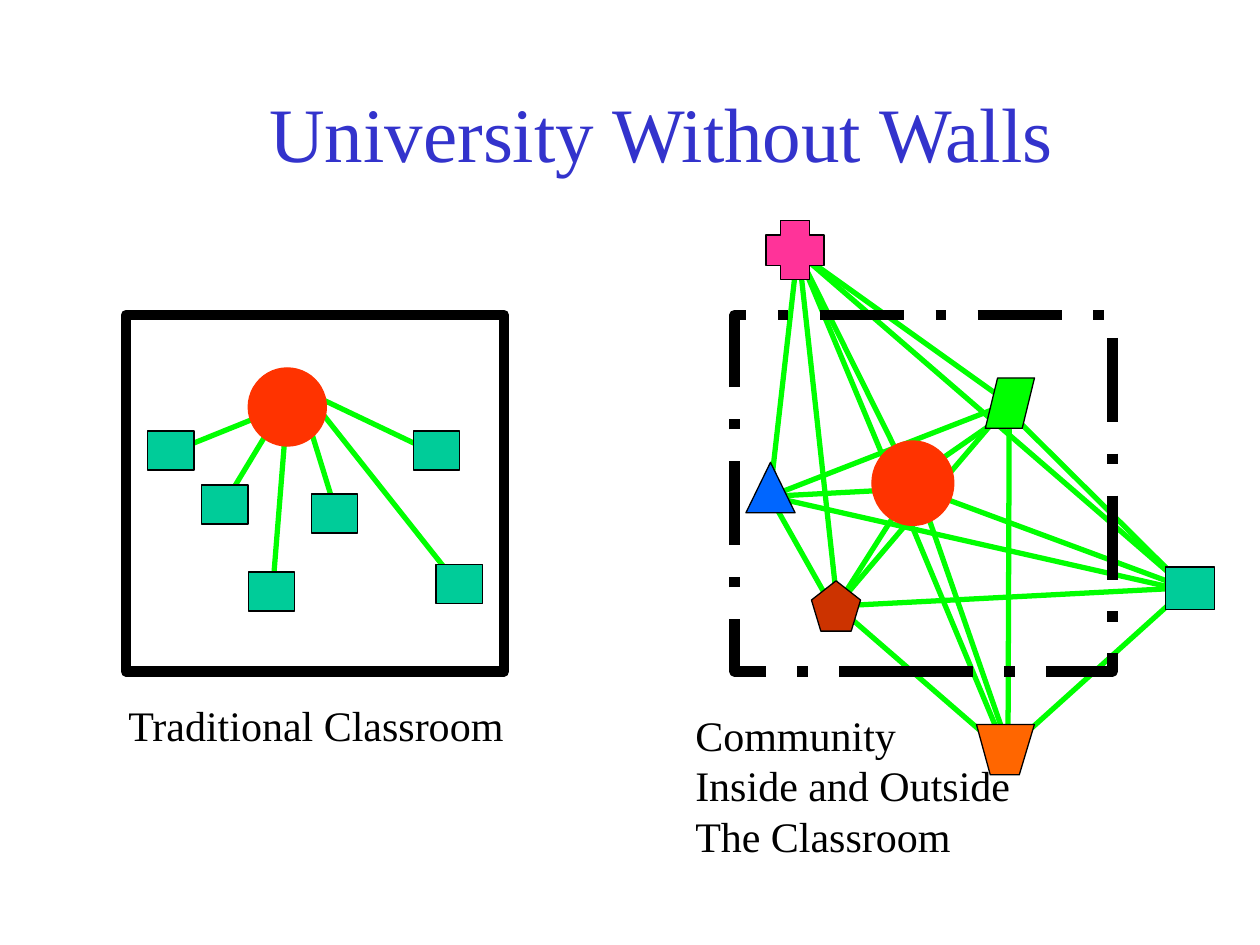
from lxml import etree
from pptx import Presentation
from pptx.dml.color import RGBColor
from pptx.enum.dml import MSO_LINE
from pptx.enum.shapes import MSO_CONNECTOR, MSO_SHAPE
from pptx.enum.text import MSO_ANCHOR, MSO_AUTO_SIZE, PP_ALIGN
from pptx.oxml.ns import qn
from pptx.util import Inches, Pt

RECT = MSO_SHAPE.RECTANGLE
OVAL = MSO_SHAPE.OVAL
SLANT = MSO_SHAPE.PARALLELOGRAM
CROSS = MSO_SHAPE.CROSS
WEDGE = MSO_SHAPE.ISOSCELES_TRIANGLE
PENTA = MSO_SHAPE.REGULAR_PENTAGON
DASH = MSO_LINE.LONG_DASH_DOT
LINE = MSO_CONNECTOR.STRAIGHT
FONT = "Times New Roman"
COLORS = {
    "title": "3333CC", "black": "000000", "link": "00FF00", "hub": "FF3300",
    "teal": "00CC99", "orange": "FF6600", "pink": "FF3399",
    "blue": "0066FF", "brick": "CC3300",
}
COLORS = {name: RGBColor.from_string(code) for name, code in COLORS.items()}

deck = Presentation()
deck.slide_width, deck.slide_height = Inches(10), Inches(7.5)
slide = deck.slides.add_slide(deck.slide_layouts[5])
shapes = slide.shapes


def paint(shape, fill, line="black", width=0.75):
    shape.shadow.inherit = False
    if fill:
        shape.fill.solid()
        shape.fill.fore_color.rgb = COLORS[fill]
    else:
        shape.fill.background()
    shape.line.color.rgb = COLORS[line]
    shape.line.width = Pt(width)
    return shape


def write(para, text, size, color):
    run = para.add_run()
    run.text = text
    run.font.name = FONT
    run.font.size = Pt(size)
    run.font.color.rgb = COLORS[color]


title = shapes.title
title.left, title.top = Inches(1), Inches(0.42)
title.width, title.height = Inches(8.5), Inches(1.25)
frame = title.text_frame
frame.auto_size = MSO_AUTO_SIZE.NONE
frame.vertical_anchor = MSO_ANCHOR.MIDDLE
frame.paragraphs[0].alignment = PP_ALIGN.CENTER
write(frame.paragraphs[0], "University Without Walls", 44, "title")

room = shapes.add_shape(RECT, Inches(1), Inches(2.5), Inches(3), Inches(2.83))
paint(room, None, width=6)

links = [
    (2.1, 3.29, 1.48, 3.54), (2.28, 3.17, 1.79, 3.98),
    (2.28, 3.23, 2.16, 4.73), (2.41, 3.23, 2.66, 4.04),
    (2.47, 3.17, 3.65, 4.66), (2.41, 3.1, 3.46, 3.6),
    (6.33, 2, 8.01, 3.2), (8.01, 3.27, 9.42, 4.67),
    (9.33, 4.75, 7.92, 6.02), (7.92, 5.92, 6.64, 4.81),
    (6.64, 4.88, 6.11, 3.94), (6.11, 3.94, 6.33, 2),
    (6.33, 2, 7.23, 3.81), (8.01, 3.27, 7.23, 3.81),
    (9.42, 4.67, 7.29, 3.88), (7.29, 3.88, 8, 5.92),
    (7.23, 3.88, 6.64, 4.81), (7.23, 3.88, 6.11, 3.94),
    (6.33, 1.92, 6.64, 4.75), (6.33, 2, 8, 6),
    (6.33, 2, 9.42, 4.67), (8.01, 3.2, 6.11, 3.94),
    (8.01, 3.2, 6.64, 4.81), (8.01, 3.2, 8, 5.92),
    (9.33, 4.67, 6.11, 3.94), (9.33, 4.67, 6.64, 4.81),
]
for ends in links:
    link = shapes.add_connector(LINE, *[Inches(n) for n in ends])
    link.line.color.rgb = COLORS["link"]
    link.line.width = Pt(3)
    etree.SubElement(link._element.spPr, qn("a:effectLst"))

seats = [(1.6, 3.85), (1.17, 3.42), (1.97, 4.54),
         (2.47, 3.92), (3.46, 4.48), (3.28, 3.42)]
nodes = [(OVAL, 1.97, 2.92, 0.62, 0.62, "hub", "hub")]
nodes += [(RECT, x, y, 0.37, 0.31, "teal", "black") for x, y in seats]
nodes += [
    (OVAL, 6.92, 3.5, 0.65, 0.67, "hub", "hub"),
    (RECT, 9.25, 4.5, 0.39, 0.34, "teal", "black"),
    (SLANT, 7.82, 3, 0.39, 0.4, "link", "black"),
    (CROSS, 6.08, 1.75, 0.46, 0.47, "pink", "black"),
    (WEDGE, 5.92, 3.67, 0.39, 0.4, "blue", "black"),
    (PENTA, 6.44, 4.61, 0.39, 0.4, "brick", "black"),
]
for kind, x, y, wide, high, fill, line in nodes:
    node = shapes.add_shape(kind, Inches(x), Inches(y), Inches(wide), Inches(high))
    paint(node, fill, line)

pen = shapes.build_freeform(Inches(7.75), Inches(5.75))
rim = [(7.86, 6.15), (8.09, 6.15), (8.21, 5.75)]
pen.add_line_segments([(Inches(x), Inches(y)) for x, y in rim], close=True)
paint(pen.convert_to_shape(), "orange")

walls = shapes.add_shape(RECT, Inches(5.83), Inches(2.5), Inches(3), Inches(2.83))
paint(walls, None, width=6).line.dash_style = DASH

labels = [
    (0.92, 5.5, 3.19, 0.5, ["Traditional Classroom"]),
    (5.42, 5.58, 2.7, 1.3, ["Community", "Inside and Outside", "The Classroom"]),
]
for x, y, wide, high, rows in labels:
    box = shapes.add_textbox(Inches(x), Inches(y), Inches(wide), Inches(high))
    frame = box.text_frame
    frame.word_wrap = False
    frame.auto_size = MSO_AUTO_SIZE.SHAPE_TO_FIT_TEXT
    for i, row in enumerate(rows):
        para = frame.add_paragraph() if i else frame.paragraphs[0]
        write(para, row, 24, "black")

deck.save("out.pptx")
